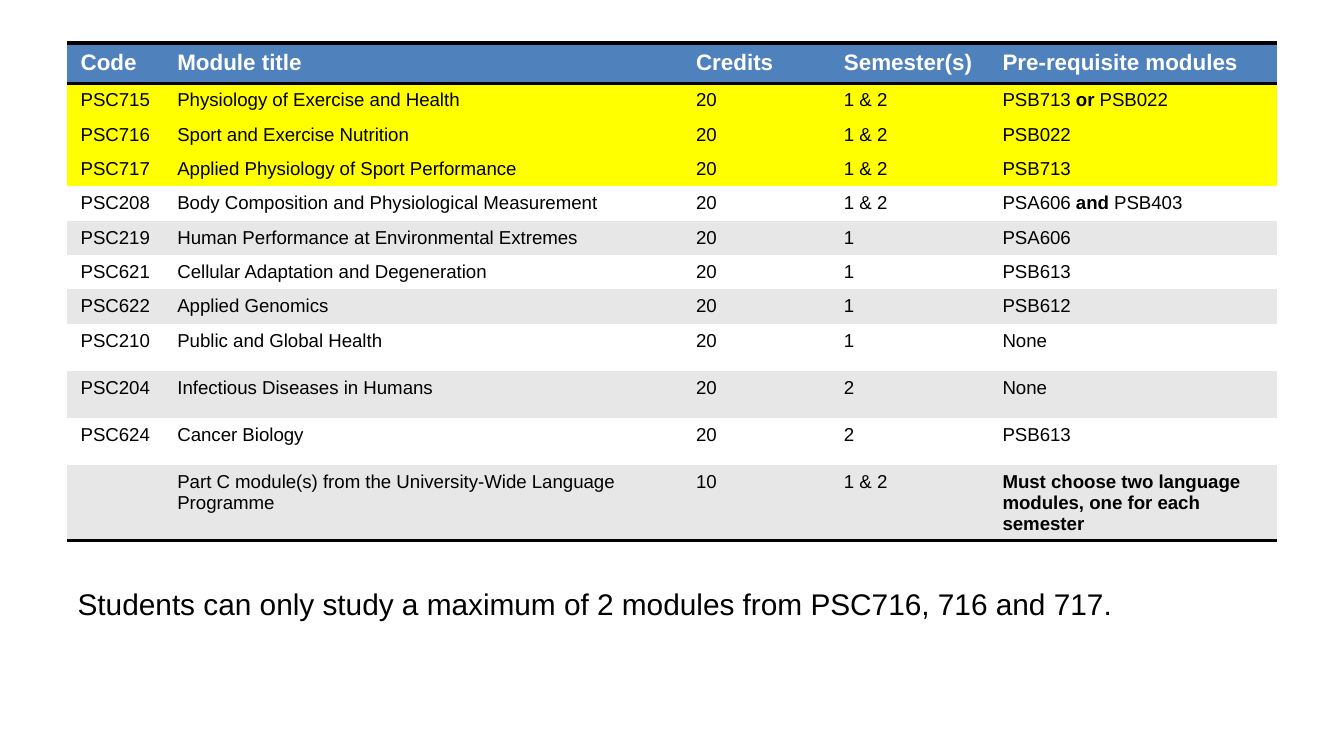
from lxml import etree
from pptx import Presentation
from pptx.dml.color import RGBColor
from pptx.oxml.ns import qn
from pptx.util import Inches, Pt

FONT = "Arial"
BLACK, WHITE, BLUE, YELLOW, GREY = "000000", "FFFFFF", "4F81BD", "FFFF00", "E7E7E7"
NO_GRID_STYLE = "{2D5ABB26-0587-4C30-8999-92F81FD0307C}"
BOLD_MARK = "**"
HIGHLIGHTED_ROWS = 3
BORDER_WIDTH = 2

COLUMN_WIDTHS = [0.72, 3.86, 1.1, 1.18, 2.14]
ROW_HEIGHTS = [0.3] + [0.18] * 7 + [0.35] * 4
TABLE_HEIGHT = 3.83
HEADINGS = ["Code", "Module title", "Credits", "Semester(s)", "Pre-requisite modules"]
MODULES = [
    ["PSC715", "Physiology of Exercise and Health", "20", "1 & 2", "PSB713 **or** PSB022"],
    ["PSC716", "Sport and Exercise Nutrition", "20", "1 & 2", "PSB022"],
    ["PSC717", "Applied Physiology of Sport Performance", "20", "1 & 2", "PSB713"],
    ["PSC208", "Body Composition and Physiological Measurement", "20", "1 & 2",
     "PSA606 **and** PSB403"],
    ["PSC219", "Human Performance at Environmental Extremes", "20", "1", "PSA606"],
    ["PSC621", "Cellular Adaptation and Degeneration", "20", "1", "PSB613"],
    ["PSC622", "Applied Genomics", "20", "1", "PSB612"],
    ["PSC210", "Public and Global Health", "20", "1", "None"],
    ["PSC204", "Infectious Diseases in Humans", "20", "2", "None"],
    ["PSC624", "Cancer Biology", "20", "2", "PSB613"],
    ["", "Part C module(s) from the University-Wide Language Programme", "10", "1 & 2",
     "**Must choose two language modules, one for each semester**"],
]
NOTE = "Students can only study a maximum of 2 modules from PSC716, 716 and 717."

HEADING_FORMAT = {"name": FONT, "size": Pt(12), "bold": True}
BODY_FORMAT = {"name": FONT, "size": Pt(10), "bold": False}
NOTE_FORMAT = {"name": FONT, "size": Pt(16), "bold": False}


def set_color(color_format, color):
    color_format.rgb = RGBColor.from_string(color)


def format_font(font, values, color):
    for name, value in values.items():
        setattr(font, name, value)
    font.fill.solid()
    set_color(font.fill.fore_color, color)


def write_text(paragraph, text, values, color):
    for index, part in enumerate(text.split(BOLD_MARK)):
        if part:
            run = paragraph.add_run()
            run.text = part
            emphasis = {"bold": True} if index % 2 else {}
            format_font(run.font, values | emphasis, color)


def add_border(cell, tag):
    properties = cell._tc.get_or_add_tcPr()
    line = etree.SubElement(properties, qn(tag), w=str(Pt(BORDER_WIDTH)))
    fill = etree.SubElement(line, qn("a:solidFill"))
    etree.SubElement(fill, qn("a:srgbClr"), val=BLACK)


def fill_cell(cell, text, values, text_color, fill_color, borders):
    for tag in borders:
        add_border(cell, tag)
    cell.fill.solid()
    set_color(cell.fill.fore_color, fill_color)
    write_text(cell.text_frame.paragraphs[0], text, values, text_color)


def row_color(row):
    if row == 0:
        return BLUE
    if row <= HIGHLIGHTED_ROWS:
        return YELLOW
    return GREY if row % 2 else WHITE


def row_borders(row):
    if row == 0:
        return ["a:lnT", "a:lnB"]
    return ["a:lnB"] if row == len(MODULES) else []


def add_module_table(slide):
    rows = [HEADINGS] + MODULES
    frame = slide.shapes.add_table(len(rows), len(HEADINGS), Inches(0.5), Inches(0.32),
                                   Inches(sum(COLUMN_WIDTHS)), Inches(TABLE_HEIGHT))
    table = frame.table
    table.horz_banding = False
    table._tbl.tblPr.find(qn("a:tableStyleId")).text = NO_GRID_STYLE
    for column, width in zip(table.columns, COLUMN_WIDTHS):
        column.width = Inches(width)
    for index, texts in enumerate(rows):
        table.rows[index].height = Inches(ROW_HEIGHTS[index])
        values, text_color = (BODY_FORMAT, BLACK) if index else (HEADING_FORMAT, WHITE)
        for column, text in enumerate(texts):
            fill_cell(table.cell(index, column), text, values, text_color,
                      row_color(index), row_borders(index))
    frame.height = Inches(TABLE_HEIGHT)


def add_note(slide):
    box = slide.shapes.add_textbox(Inches(0.48), Inches(4.31), Inches(9), Inches(0.37))
    box.text_frame.word_wrap = True
    write_text(box.text_frame.paragraphs[0], NOTE, NOTE_FORMAT, BLACK)


def main():
    presentation = Presentation()
    presentation.slide_width = Inches(10)
    presentation.slide_height = presentation.slide_width * 9 // 16
    slide = presentation.slides.add_slide(presentation.slide_layouts[6])
    add_module_table(slide)
    add_note(slide)
    presentation.save("out.pptx")


if __name__ == "__main__":
    main()
